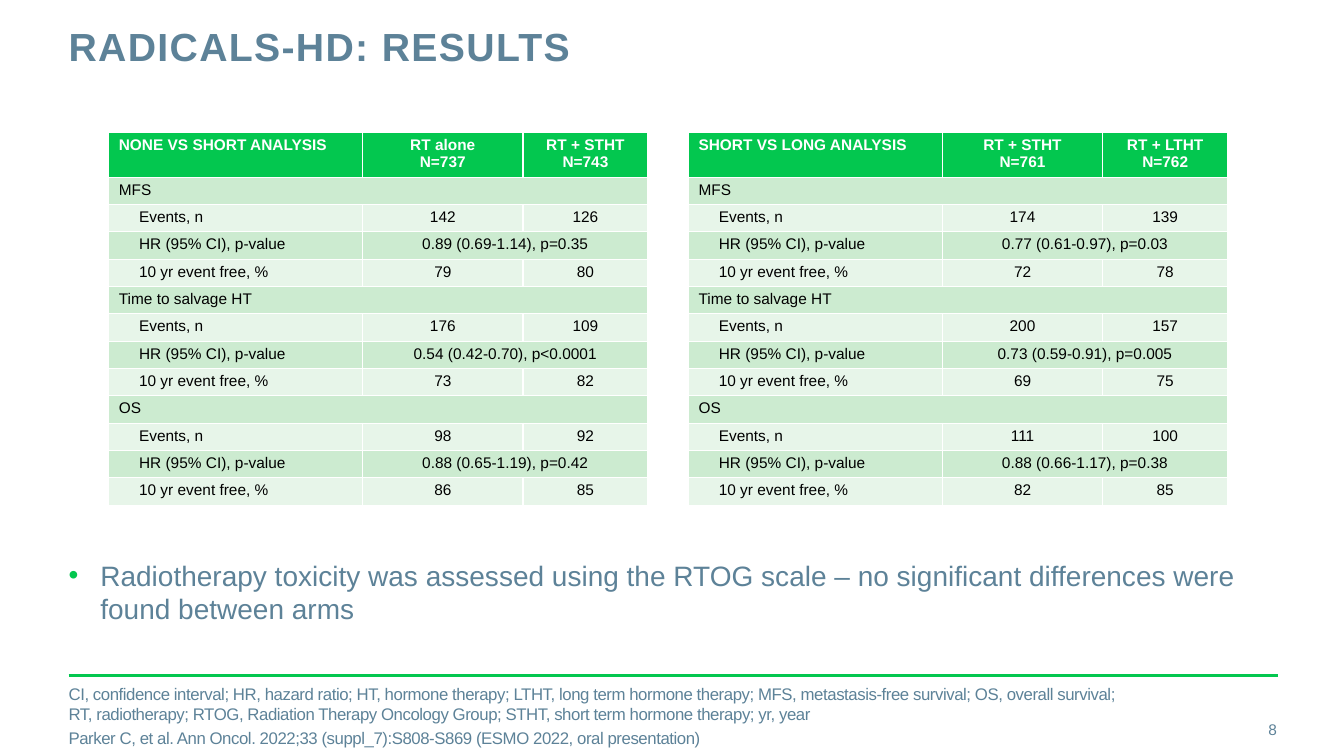
from dataclasses import dataclass

from lxml.etree import SubElement
from pptx import Presentation
from pptx.dml.color import RGBColor
from pptx.enum.shapes import MSO_CONNECTOR
from pptx.enum.text import MSO_ANCHOR, PP_ALIGN
from pptx.oxml.ns import qn
from pptx.util import Cm, Pt


@dataclass(frozen=True)
class Theme:
    font: str = "Arial"
    slate: RGBColor = RGBColor(0x5D, 0x82, 0x98)
    green: RGBColor = RGBColor(0x03, 0xC7, 0x4F)
    band_dark: RGBColor = RGBColor(0xCC, 0xEB, 0xD0)
    band_light: RGBColor = RGBColor(0xE7, 0xF5, 0xE9)
    white: RGBColor = RGBColor(0xFF, 0xFF, 0xFF)
    black: RGBColor = RGBColor(0, 0, 0)
    title_size: Pt = Pt(28)
    body_size: Pt = Pt(20)
    note_size: Pt = Pt(12)
    small_size: Pt = Pt(11)


theme = Theme()


def style_paragraph(paragraph, size, color, bold=False, spacing=0):
    font = paragraph.font
    font.name = theme.font
    font.size = size
    font.bold = bold
    font.color.rgb = color
    if spacing:
        paragraph._p.pPr.find(qn("a:defRPr")).set("spc", str(spacing))


def add_text(slide, left, top, width, height, text, size, bold=False, spacing=0):
    frame = slide.shapes.add_textbox(Cm(left), Cm(top), Cm(width), Cm(height)).text_frame
    frame.word_wrap = True
    frame.margin_left = frame.margin_right = frame.margin_top = frame.margin_bottom = 0
    frame.text = text
    for paragraph in frame.paragraphs:
        properties = paragraph._p.get_or_add_pPr()
        if size == theme.body_size:
            properties.set("marL", str(Cm(0.8)))
            properties.set("indent", str(Cm(-0.8)))
            bullet_color = SubElement(properties, qn("a:buClr"))
            SubElement(bullet_color, qn("a:srgbClr"), val=str(theme.green))
            SubElement(properties, qn("a:buFont"), typeface=theme.font)
            SubElement(properties, qn("a:buChar"), char="•")
        style_paragraph(paragraph, size, theme.slate, bold, spacing)
    return frame


presentation = Presentation()
presentation.slide_width = Cm(33.87)
presentation.slide_height = Cm(19.05)
slide = presentation.slides.add_slide(presentation.slide_layouts[6])

footer_line = slide.shapes.add_connector(
    MSO_CONNECTOR.STRAIGHT, Cm(1.73), Cm(17.02), Cm(32.2), Cm(17.02)
)
footer_line.line.color.rgb = theme.green
footer_line.line.width = Pt(2)
SubElement(footer_line._element.spPr, qn("a:effectLst"))

title = add_text(slide, 1.73, 0.69, 24.28, 2.24, "RADICALS-HD: RESULTS",
                 theme.title_size, bold=True, spacing=100)
title.paragraphs[0].line_spacing = Pt(30)

add_text(slide, 1.73, 14.07, 30.45, 2.46,
         "Radiotherapy toxicity was assessed using the RTOG scale – "
         "no significant differences were found between arms", theme.body_size)

page_number = add_text(slide, 30, 17.86, 2.18, 1.02, "8", theme.small_size)
page_number.vertical_anchor = MSO_ANCHOR.MIDDLE
page_number.paragraphs[0].alignment = PP_ALIGN.RIGHT

footnotes = add_text(
    slide, 1.73, 17.53, 27, 1.02,
    "CI, confidence interval; HR, hazard ratio; HT, hormone therapy; LTHT, long term hormone "
    "therapy; MFS, metastasis-free survival; OS, overall survival; RT, radiotherapy; RTOG, "
    "Radiation Therapy Oncology Group; STHT, short term hormone therapy; yr, year\n"
    "Parker C, et al. Ann Oncol. 2022;33 (suppl_7):S808-S869 (ESMO 2022, oral presentation)",
    theme.note_size, spacing=-30)
footnotes.vertical_anchor = MSO_ANCHOR.MIDDLE
footnotes.paragraphs[1].space_before = Pt(3)

outcomes = ["MFS", "Time to salvage HT", "OS"]
measures = ["Events, n", "HR (95% CI), p-value", "10 yr event free, %"]
analyses = [
    (2.74, ["NONE VS SHORT ANALYSIS", "RT alone\nN=737", "RT + STHT\nN=743"], [
        [("142", "126"), ("0.89 (0.69-1.14), p=0.35",), ("79", "80")],
        [("176", "109"), ("0.54 (0.42-0.70), p<0.0001",), ("73", "82")],
        [("98", "92"), ("0.88 (0.65-1.19), p=0.42",), ("86", "85")],
    ]),
    (17.35, ["SHORT VS LONG ANALYSIS", "RT + STHT\nN=761", "RT + LTHT\nN=762"], [
        [("174", "139"), ("0.77 (0.61-0.97), p=0.03",), ("72", "78")],
        [("200", "157"), ("0.73 (0.59-0.91), p=0.005",), ("69", "75")],
        [("111", "100"), ("0.88 (0.66-1.17), p=0.38",), ("82", "85")],
    ]),
]
column_widths = [6.4, 4.04, 3.15]
row_heights = [1.13] + [0.69] * 12

for left, header, results in analyses:
    rows = [header]
    for outcome, outcome_results in zip(outcomes, results):
        rows.append([outcome])
        rows += [[measure, *values] for measure, values in zip(measures, outcome_results)]

    table = slide.shapes.add_table(
        len(rows), len(column_widths), Cm(left), Cm(3.33),
        Cm(sum(column_widths)), Cm(sum(row_heights))
    ).table
    for column, width in zip(table.columns, column_widths):
        column.width = Cm(width)

    for row_index, texts in enumerate(rows):
        table.rows[row_index].height = Cm(row_heights[row_index])
        is_header = row_index == 0
        band = theme.band_dark if row_index % 2 else theme.band_light
        if len(texts) < len(column_widths):
            table.cell(row_index, len(texts) - 1).merge(table.cell(row_index, 2))
        for column_index in range(len(column_widths)):
            cell = table.cell(row_index, column_index)
            cell.fill.solid()
            cell.fill.fore_color.rgb = theme.green if is_header else band
            cell.margin_top = cell.margin_bottom = Cm(0.1)
            if column_index >= len(texts):
                continue
            cell.text_frame.text = texts[column_index]
            for paragraph in cell.text_frame.paragraphs:
                if column_index:
                    paragraph.alignment = PP_ALIGN.CENTER
                elif texts[0] in measures:
                    paragraph.level = 1
                    paragraph._p.pPr.set("marL", str(Cm(1.27)))
                    paragraph._p.pPr.set("indent", str(Cm(-0.76)))
                style_paragraph(paragraph, theme.small_size,
                                theme.white if is_header else theme.black, bold=is_header)

presentation.save("out.pptx")
